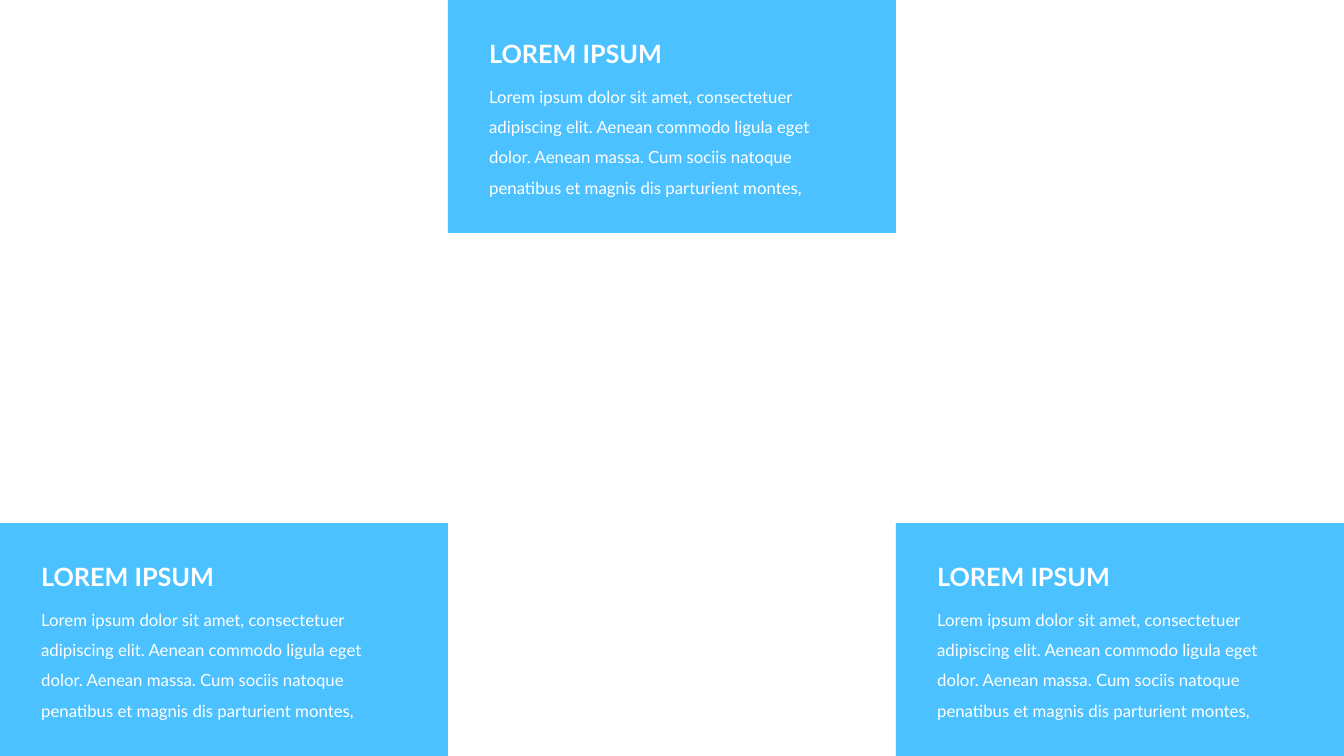
from dataclasses import dataclass

from lxml.etree import SubElement
from pptx import Presentation
from pptx.dml.color import RGBColor
from pptx.enum.shapes import MSO_SHAPE
from pptx.enum.text import MSO_AUTO_SIZE as AutoSize
from pptx.oxml.ns import qn
from pptx.util import Pt


@dataclass(frozen=True)
class Theme:
    panel: RGBColor = RGBColor(0x2C, 0xB7, 0xFF)
    panel_opacity: int = 85
    text: RGBColor = RGBColor(0xFF, 0xFF, 0xFF)
    font: str = "Lato"
    heading_size: int = 18
    body_size: int = 12


THEME = Theme()

# Slide grid in points: three equal columns
SLIDE_W, SLIDE_H = 960, 540
PANEL_W, PANEL_H = SLIDE_W / 3, 166.4
TEXT_INSET = 22.3
TEXT_W = PANEL_W - 2 * TEXT_INSET
HEADING_TOP, HEADING_H = 23.8, 29
BODY_TOP, BODY_H = 51.1, 91.4

HEADING = "LOREM IPSUM"
BODY = (
    "Lorem ipsum dolor sit amet, consectetuer adipiscing elit. "
    "Aenean commodo ligula eget dolor. Aenean massa. "
    "Cum sociis natoque penatibus et magnis dis parturient montes,"
)


def add_panel(slide, left, top):
    panel = slide.shapes.add_shape(
        MSO_SHAPE.RECTANGLE, Pt(left), Pt(top), Pt(PANEL_W), Pt(PANEL_H))
    panel.shadow.inherit = False
    panel.line.fill.background()
    panel.fill.solid()
    panel.fill.fore_color.rgb = THEME.panel
    # Transparency of the panel colour
    color = panel.fill._xPr.find(qn("a:solidFill"))[0]
    SubElement(color, qn("a:alpha"), val=str(THEME.panel_opacity * 1000))


def add_text(slide, text, left, top, height, size, bold=False, spacing=None):
    box = slide.shapes.add_textbox(Pt(left), Pt(top), Pt(TEXT_W), Pt(height))
    frame = box.text_frame
    frame.word_wrap = True
    frame.auto_size = AutoSize.SHAPE_TO_FIT_TEXT
    paragraph = frame.paragraphs[0]
    paragraph.text = text
    paragraph.line_spacing = spacing
    font = paragraph.font
    font.name = THEME.font
    font.size = Pt(size)
    font.bold = bold
    font.color.rgb = THEME.text


def add_caption(slide, left, top):
    text_left = left + TEXT_INSET
    add_text(slide, HEADING, text_left, top + HEADING_TOP, HEADING_H,
             THEME.heading_size, bold=True)
    add_text(slide, BODY, text_left, top + BODY_TOP, BODY_H,
             THEME.body_size, spacing=1.5)


def main():
    deck = Presentation()
    deck.slide_width, deck.slide_height = Pt(SLIDE_W), Pt(SLIDE_H)
    slide = deck.slides.add_slide(deck.slide_layouts[6])

    # Outer panels sit at the bottom, the middle one at the top
    bottom = SLIDE_H - PANEL_H
    corners = [(column * PANEL_W, top)
               for column, top in enumerate((bottom, 0, bottom))]
    for corner in corners:
        add_panel(slide, *corner)
    for corner in corners:
        add_caption(slide, *corner)

    deck.save("out.pptx")


if __name__ == "__main__":
    main()
